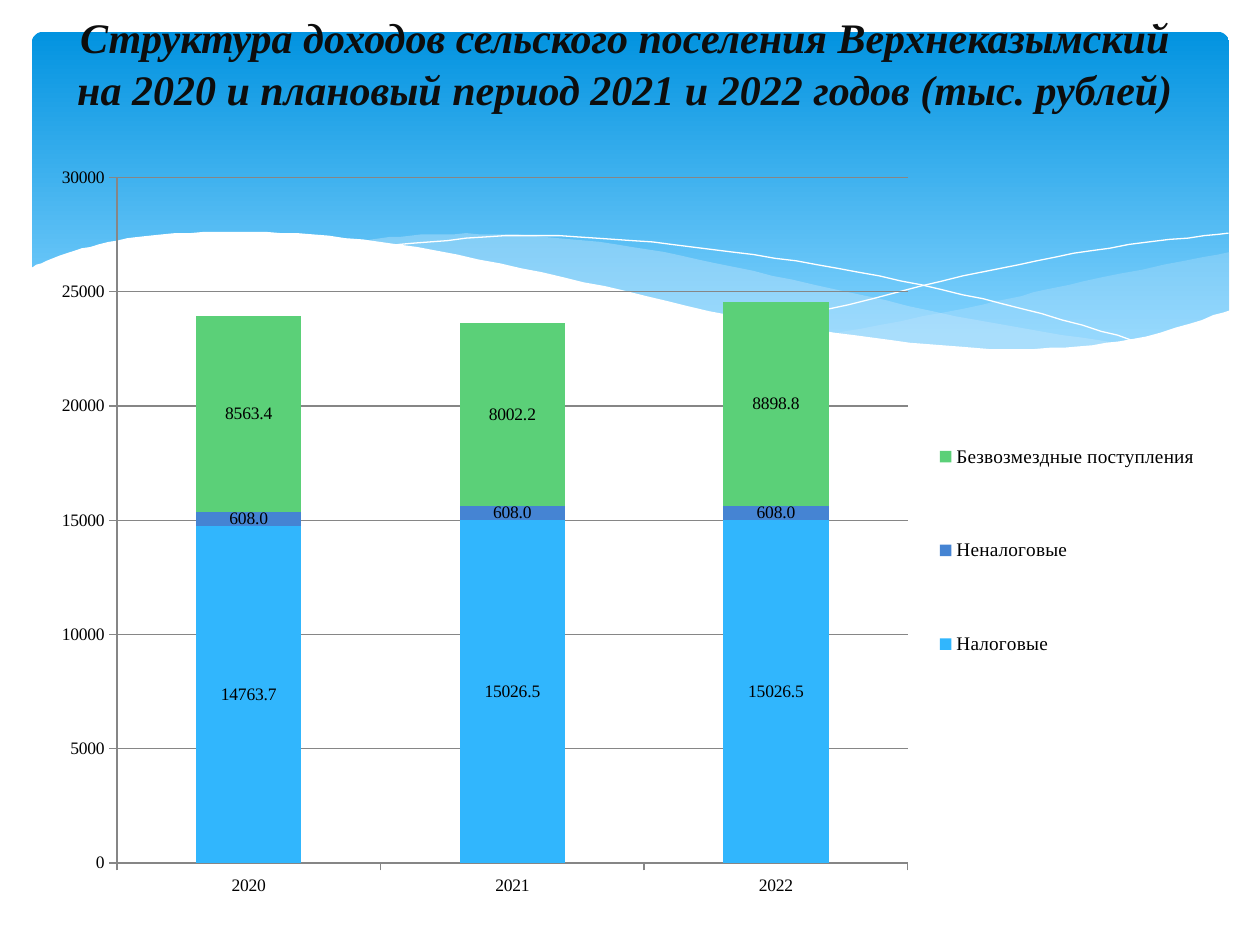
from dataclasses import dataclass
from typing import Optional

from lxml.etree import SubElement
from pptx import Presentation
from pptx.chart.data import CategoryChartData
from pptx.dml.color import RGBColor
from pptx.enum.chart import XL_CHART_TYPE as ChartType
from pptx.enum.chart import XL_LEGEND_POSITION as LegendPosition
from pptx.enum.chart import XL_TICK_MARK as TickMark
from pptx.enum.shapes import MSO_SHAPE as Preset
from pptx.enum.text import MSO_ANCHOR as Anchor
from pptx.enum.text import MSO_AUTO_SIZE as AutoSize
from pptx.enum.text import PP_ALIGN as Align
from pptx.oxml.ns import qn
from pptx.util import Cm, Pt

COLORS = {
    "sky_top": "0293E0", "sky_bottom": "83D3FE", "mist": "C6E7FC", "white": "FFFFFF",
    "title": "0D0D0D", "text": "000000", "grid": "868686",
    "tax": "31B6FD", "non_tax": "4584D3", "grants": "5BD078",
}
SERIF = "Times New Roman"
WAVE_UNIT = Cm(0.0254)  # wave knots are in hundredths of an inch
CURVE_STEPS = 8
Point = tuple[float, float]


@dataclass
class Wave:
    edges: list[list[Point]]  # each edge is a smooth curve through its knots
    fill: Optional[str] = None  # without a fill the wave is a thin white line
    opacity: int = 100


@dataclass
class Income:
    name: str
    values: tuple[float, ...]
    color: str


WAVES = [
    Wave([[(976, 200), (861, 223), (779, 242), (661, 265)],
          [(661, 265), (745, 275), (824, 278), (905, 269), (976, 247)]], "mist", 29),
    Wave([[(893, 273), (775, 254), (629, 222), (514, 198), (420, 187), (344, 186), (286, 191)],
          [(286, 191), (362, 203), (449, 222), (566, 248), (680, 268), (796, 278), (893, 273)]],
         "mist", 40),
    Wave([[(309, 195), (416, 187), (533, 194), (665, 213), (795, 241), (907, 272)]]),
    Wave([[(613, 257), (748, 223), (866, 199), (975, 185)]]),
    Wave([[(977, 246), (899, 269), (809, 277), (708, 270), (579, 250), (447, 220),
           (316, 194), (211, 184), (119, 187), (59, 199), (23, 213)],
          [(23, 329), (977, 329)]], "white"),
]

YEARS = ("2020", "2021", "2022")
INCOMES = [
    Income("Налоговые", (14763.7, 15026.5, 15026.5), "tax"),
    Income("Неналоговые", (608, 608, 608), "non_tax"),
    Income("Безвозмездные поступления", (8563.4, 8002.2, 8898.8), "grants"),
]


def rgb(name: str) -> RGBColor:
    return RGBColor.from_string(COLORS[name])


def smooth(knots: list[Point]) -> list[Point]:
    """Sample a Catmull-Rom curve through the knots."""
    padded = [knots[0], *knots, knots[-1]]
    points = [knots[0]]
    for quad in zip(padded, padded[1:], padded[2:], padded[3:]):
        for step in range(1, CURVE_STEPS + 1):
            t = step / CURVE_STEPS
            points.append(tuple(
                b + t / 2 * (c - a + t * (2 * a - 5 * b + 4 * c - d
                                          + t * (3 * (b - c) + d - a)))
                for a, b, c, d in zip(*quad)))
    return points


def draw_sky(shapes) -> None:
    sky = shapes.add_shape(Preset.ROUNDED_RECTANGLE, Cm(0.64), Cm(0.64), Cm(24.14), Cm(6.86))
    sky.adjustments[0] = 0.034
    sky.shadow.inherit = False
    sky.line.fill.background()
    sky.fill.gradient()
    sky.fill.gradient_angle = 270
    stops = zip(sky.fill.gradient_stops, (0, 0.9), ("sky_top", "sky_bottom"))
    for stop, position, color in stops:
        stop.position = position
        stop.color.rgb = rgb(color)


def draw_wave(shapes, wave: Wave) -> None:
    points = [point for edge in wave.edges for point in smooth(edge)]
    builder = shapes.build_freeform(*points[0], scale=WAVE_UNIT)
    builder.add_line_segments(points[1:], close=wave.fill is not None)
    outline = builder.convert_to_shape()
    outline.shadow.inherit = False
    if wave.fill is None:
        outline.fill.background()
        outline.line.color.rgb = rgb("white")
        outline.line.width = Pt(0)
        return
    outline.line.fill.background()
    outline.fill.solid()
    outline.fill.fore_color.rgb = rgb(wave.fill)
    if wave.opacity < 100:
        color = outline.element.find(".//" + qn("a:srgbClr"))
        SubElement(color, qn("a:alpha"), val=str(wave.opacity * 1000))


def write_title(title) -> None:
    title.left, title.top, title.width, title.height = Cm(1.09), Cm(0.53), Cm(23.01), Cm(2.39)
    frame = title.text_frame
    frame.word_wrap = True
    frame.auto_size = AutoSize.NONE
    frame.vertical_anchor = Anchor.MIDDLE
    frame.margin_bottom = Cm(1.1)
    paragraph = frame.paragraphs[0]
    paragraph.alignment = Align.CENTER
    paragraph.line_spacing = 1.05
    run = paragraph.add_run()
    run.text = ("Структура доходов сельского поселения Верхнеказымский "
                "на 2020 и плановый период 2021 и 2022 годов (тыс. рублей)")
    run.font.name, run.font.size = SERIF, Pt(24)
    run.font.bold = run.font.italic = True
    run.font.color.rgb = rgb("title")


def set_layout(part, index: int, x: float, y: float, w: float, h: float, inner=False) -> None:
    """Place a chart part by fractions of the chart's size."""
    for old in part.findall(qn("c:layout")):
        part.remove(old)
    layout = SubElement(part, qn("c:layout"))
    part.insert(index, layout)
    manual = SubElement(layout, qn("c:manualLayout"))
    settings = {"xMode": "edge", "yMode": "edge", "x": x, "y": y, "w": w, "h": h}
    if inner:
        settings = {"layoutTarget": "inner", **settings}
    for tag, value in settings.items():
        SubElement(manual, qn(f"c:{tag}"), val=str(value))


def style_font(font, size: int) -> None:
    font.name, font.size = SERIF, Pt(size)
    font.color.rgb = rgb("text")


def draw_chart(shapes) -> None:
    data = CategoryChartData()
    data.categories = YEARS
    for income in INCOMES:
        data.add_series(income.name, income.values)
    chart = shapes.add_chart(ChartType.COLUMN_STACKED, Cm(0.69), Cm(3.12),
                             Cm(23.8), Cm(15.19), data).chart
    chart.has_title = False
    chart.font.name, chart.font.size = "Cabin", Pt(10)
    chart.font.color.rgb = rgb("text")

    columns = chart.plots[0]
    columns.vary_by_categories = False
    columns.overlap, columns.gap_width = 100, 150
    for series, income in zip(columns.series, INCOMES):
        series.format.fill.solid()
        series.format.fill.fore_color.rgb = rgb(income.color)
        labels = series.data_labels
        labels.show_value = True
        labels.number_format, labels.number_format_is_linked = "0.0", False
        style_font(labels.font, 10)

    amounts = chart.value_axis
    amounts.minimum_scale, amounts.maximum_scale, amounts.major_unit = 0, 30000, 5000
    amounts.has_major_gridlines = True
    for axis in (chart.category_axis, amounts):
        axis.major_tick_mark = TickMark.OUTSIDE
        style_font(axis.tick_labels.font, 10)
    for part in (chart.category_axis, amounts, amounts.major_gridlines):
        part.format.line.color.rgb = rgb("grid")
        part.format.line.width = Pt(0.75)

    chart.has_legend = True
    chart.legend.position = LegendPosition.RIGHT
    chart.legend.include_in_layout = False
    style_font(chart.legend.font, 11)
    set_layout(chart.element.find(".//" + qn("c:plotArea")), 0, 0.07, 0.03, 0.67, 0.91, inner=True)
    set_layout(chart.element.find(".//" + qn("c:legend")), 1, 0.75, 0.29, 0.25, 0.47)


def main() -> None:
    deck = Presentation()
    deck.slide_width, deck.slide_height = Cm(25.4), Cm(19.05)
    slide = deck.slides.add_slide(deck.slide_layouts[5])
    shapes = slide.shapes
    title = shapes.title
    draw_sky(shapes)
    for wave in WAVES:
        draw_wave(shapes, wave)
    shapes.element.append(title.element)  # brings the title in front of the sky
    write_title(title)
    draw_chart(shapes)
    deck.save("out.pptx")


if __name__ == "__main__":
    main()
